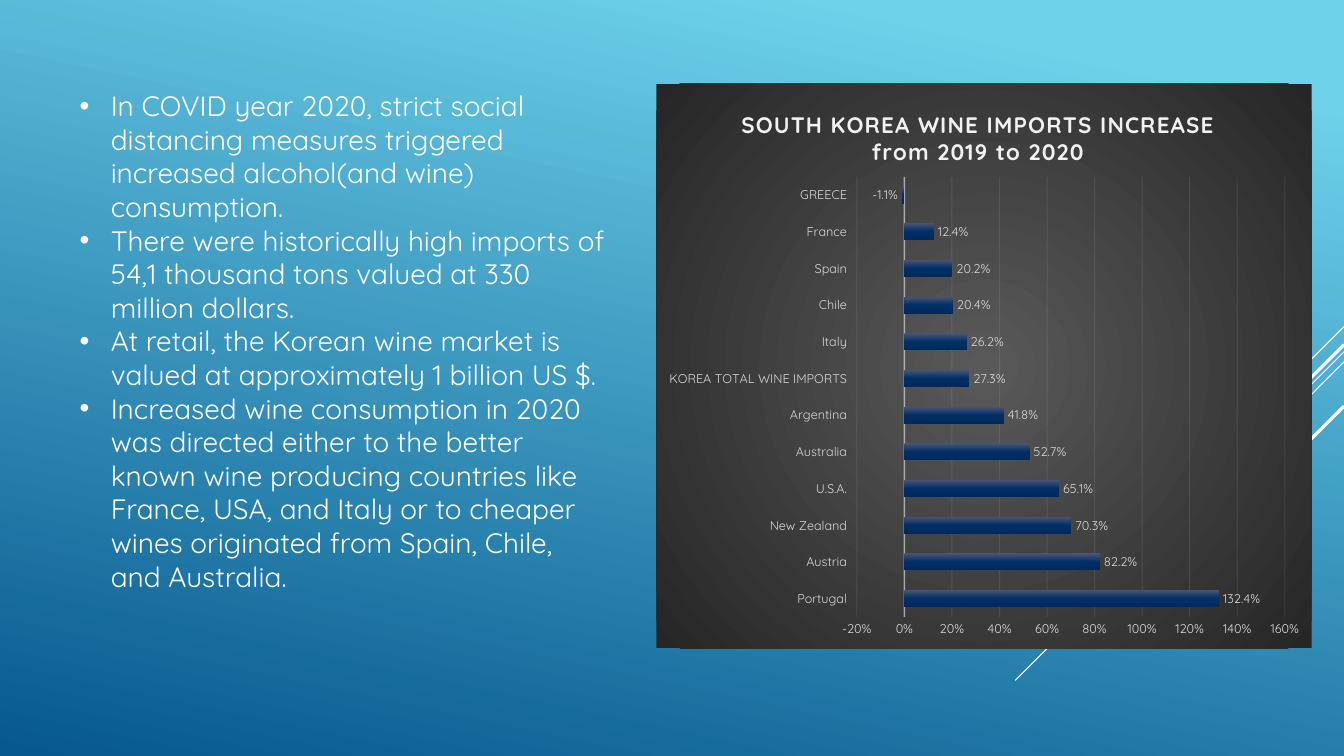
from lxml import etree
from pptx import Presentation
from pptx.chart.data import CategoryChartData
from pptx.dml.color import RGBColor
from pptx.enum.chart import XL_CHART_TYPE as ChartType, XL_LABEL_POSITION as LabelPos
from pptx.enum.chart import XL_TICK_LABEL_POSITION as TickLabelPos, XL_TICK_MARK as TickMark
from pptx.enum.shapes import MSO_CONNECTOR as Connector
from pptx.enum.text import MSO_AUTO_SIZE as AutoSize
from pptx.oxml import parse_xml
from pptx.oxml.ns import nsdecls, qn
from pptx.util import Inches, Pt

FONT = "Quicksand"
WHITE = RGBColor(0xFF, 0xFF, 0xFF)
LIGHT = RGBColor(0xF2, 0xF2, 0xF2)
GREY = RGBColor(0xD9, 0xD9, 0xD9)
SKY = RGBColor(0x6E, 0xD2, 0xEB)
OCEAN = RGBColor(0x06, 0x58, 0x8E)
CHARCOAL = RGBColor(0x59, 0x59, 0x59)
BLACK = RGBColor(0x26, 0x26, 0x26)
STEEL = RGBColor(0x4B, 0x55, 0x76)
NAVY = RGBColor(0x00, 0x2F, 0x66)
DEEP_NAVY = RGBColor(0x00, 0x29, 0x5B)


def write(p, text, size=20, color=WHITE, bold=False, spacing=0, bullet=False):
    r = p.add_run()
    r.text = text
    r.font.name, r.font.size, r.font.bold = FONT, Pt(size), bold
    r.font.color.rgb = color
    if spacing:
        r.font._element.set("spc", str(spacing))
    if bullet:
        pPr = p._p.get_or_add_pPr()
        pPr.set("marL", str(Inches(0.31)))
        pPr.set("indent", str(-Inches(0.31)))
        etree.SubElement(pPr, qn("a:buFont")).set("typeface", "Arial")
        etree.SubElement(pPr, qn("a:buChar")).set("char", "•")


def gradient(stops, shade):
    gs = "".join(f'<a:gs pos="{pos * 1000}"><a:srgbClr val="{color}"/></a:gs>'
                 for pos, color in stops)
    return parse_xml(f'<a:gradFill {nsdecls("a")} rotWithShape="1">'
                     f"<a:gsLst>{gs}</a:gsLst>{shade}</a:gradFill>")


prs = Presentation()
prs.slide_width, prs.slide_height = Inches(13.33), Inches(7.5)
s = prs.slides.add_slide(prs.slide_layouts[6])

# Background
fill = s.background.fill
fill.gradient()
fill.gradient_angle = 258
for stop, pos, color in zip(fill.gradient_stops, (0.1, 1), (SKY, OCEAN)):
    stop.position, stop.color.rgb = pos, color

# Diagonal lines from the right edge: start y, end x, end y, weight
for y1, x2, y2, weight in [(3.24, 12.33, 4.24, 0.75), (3.49, 10.07, 6.75, 0.75),
                           (3.59, 11.26, 5.67, 0.75), (3.42, 11.42, 5.33, 2.25),
                           (4.03, 11.94, 5.42, 2.25)]:
    line = s.shapes.add_connector(Connector.STRAIGHT, Inches(13.33), Inches(y1),
                                  Inches(x2), Inches(y2))
    line.line.color.rgb, line.line.width = WHITE, Pt(weight)
    etree.SubElement(line._element.spPr, qn("a:effectLst"))

# Bulleted text
tf = s.shapes.add_textbox(Inches(0.69), Inches(0.83), Inches(5.45), Inches(5.49)).text_frame
tf.word_wrap, tf.auto_size = True, AutoSize.SHAPE_TO_FIT_TEXT
points = [
    "In COVID year 2020, strict social distancing measures triggered increased "
    "alcohol(and wine) consumption.",
    "There were historically high imports of 54,1 thousand tons valued at 330 million dollars.",
    "At retail, the Korean wine market is valued at approximately 1 billion US $.",
    "Increased wine consumption in 2020 was directed either to the better known wine "
    "producing countries like France, USA, and Italy or to cheaper wines originated from "
    "Spain, Chile, and Australia.",
]
for i, point in enumerate(points):
    write(tf.add_paragraph() if i else tf.paragraphs[0], point, bullet=True)

# Import growth chart
growth = {"Portugal": 1.324, "Austria": 0.822, "New Zealand": 0.703, "U.S.A.": 0.651,
          "Australia": 0.527, "Argentina": 0.418, "KOREA TOTAL WINE IMPORTS": 0.273,
          "Italy": 0.262, "Chile": 0.204, "Spain": 0.202, "France": 0.124, "GREECE": -0.011}
data = CategoryChartData(number_format="0.0%")
data.categories = list(growth)
data.add_series("Series 1", list(growth.values()))
chart = s.shapes.add_chart(ChartType.BAR_CLUSTERED, Inches(6.51), Inches(0.83),
                           Inches(6.5), Inches(5.6), data).chart
chart.has_legend = False
chart.font.name, chart.font.size, chart.font.color.rgb = FONT, Pt(10), WHITE

# Chart title
tf = chart.chart_title.text_frame
write(tf.paragraphs[0], "SOUTH KOREA WINE IMPORTS INCREASE", 16, LIGHT, True, 100)
write(tf.add_paragraph(), "from 2019 to 2020", 16, LIGHT, True, 100)
chart.chart_title.include_in_layout = False

# Title and plot positions, as shares of the chart
title, plot_area = chart.chart_title._element, chart._chartSpace.chart.plotArea
for parent, box in [(title, {"x": 0.125, "y": 0.04}),
                    (plot_area, {"x": 0.306, "y": 0.165, "w": 0.653, "h": 0.78})]:
    for old in parent.findall(qn("c:layout")):
        parent.remove(old)
    target = '<c:layoutTarget val="inner"/>' if parent is plot_area else ""
    modes = "".join(f'<c:{k}Mode val="edge"/>' for k in box if k in "xy")
    sizes = "".join(f'<c:{k} val="{v}"/>' for k, v in box.items())
    layout = parse_xml(f'<c:layout {nsdecls("c")}><c:manualLayout>{target}{modes}{sizes}'
                       "</c:manualLayout></c:layout>")
    parent.insert(1 if parent is title else 0, layout)

# Chart backdrop
backdrop = parse_xml(f'<c:spPr {nsdecls("c", "a")}><a:ln><a:noFill/></a:ln></c:spPr>')
backdrop.insert(0, gradient(
    [(0, CHARCOAL), (100, BLACK)],
    '<a:path path="circle"><a:fillToRect l="50000" t="50000" r="50000" b="50000"/></a:path>'))
chart._chartSpace.chart.addnext(backdrop)

# Bars and their labels
plot = chart.plots[0]
plot.gap_width, plot.overlap, plot.vary_by_categories = 115, -20, False
bars = plot.series[0]
bars.invert_if_negative = False
bars._element.get_or_add_spPr().insert(0, gradient(
    [(0, STEEL), (50, NAVY), (100, DEEP_NAVY)], '<a:lin ang="5400000" scaled="0"/>'))
labels = bars.data_labels
labels.show_value, labels.position = True, LabelPos.OUTSIDE_END
labels.number_format, labels.number_format_is_linked = "0.0%", False

# Axes
cat, val = chart.category_axis, chart.value_axis
cat.tick_label_position = TickLabelPos.LOW
cat.has_major_gridlines = False
val.minimum_scale, val.maximum_scale, val.major_unit = -0.2, 1.6, 0.2
val.tick_labels.number_format, val.tick_labels.number_format_is_linked = "0%", False
val.format.line.fill.background()
for axis in (cat, val):
    axis.major_tick_mark = axis.minor_tick_mark = TickMark.NONE
for font in (cat.tick_labels.font, val.tick_labels.font, labels.font):
    font.name, font.size, font.color.rgb = FONT, Pt(9), GREY
for line, weight, opacity in [(cat.format.line, 1, 54),
                              (val.major_gridlines.format.line, 0.75, 10)]:
    line.color.rgb, line.width = LIGHT, Pt(weight)
    color = line._get_or_add_ln().find(".//" + qn("a:srgbClr"))
    etree.SubElement(color, qn("a:alpha")).set("val", str(opacity * 1000))

prs.save("out.pptx")
